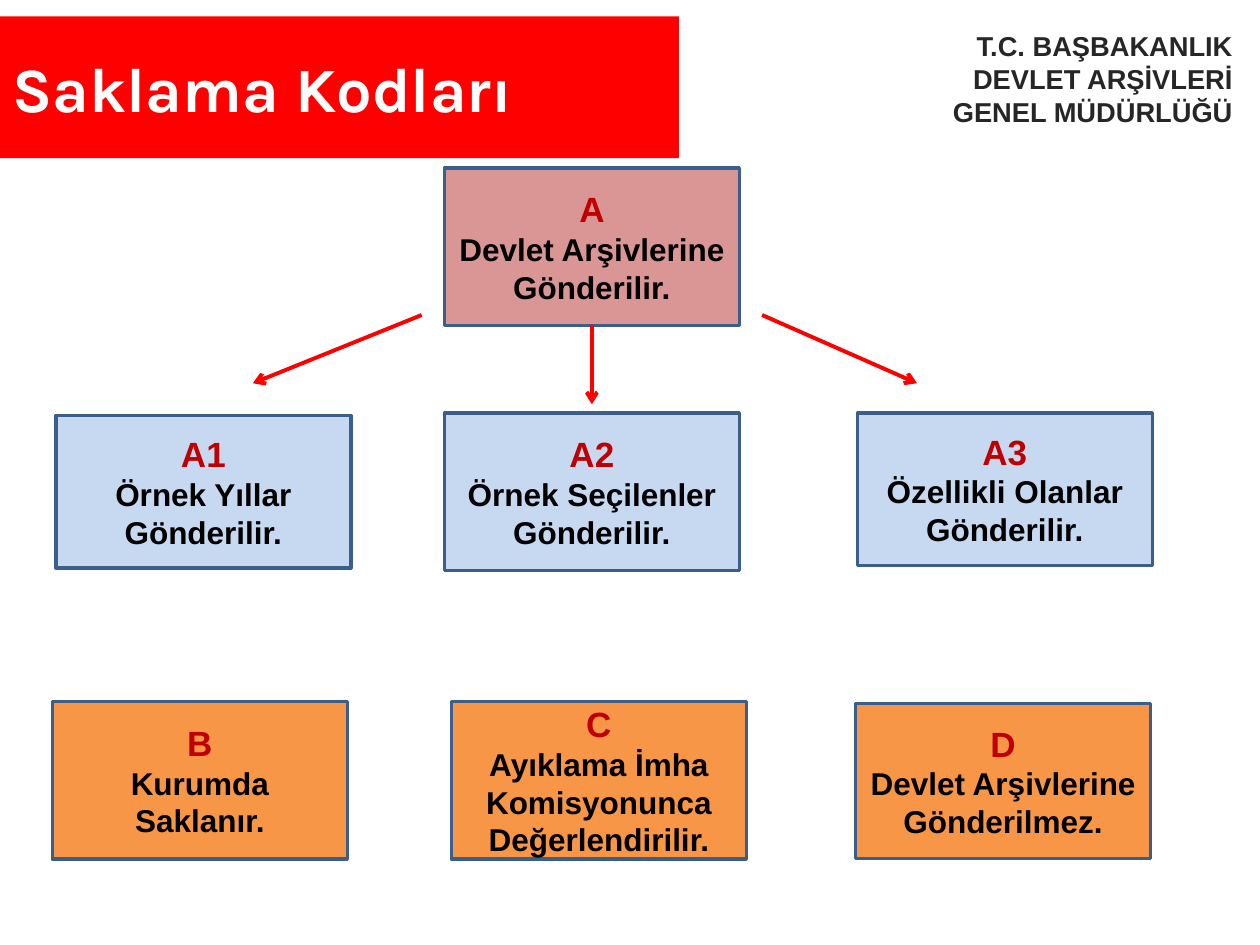
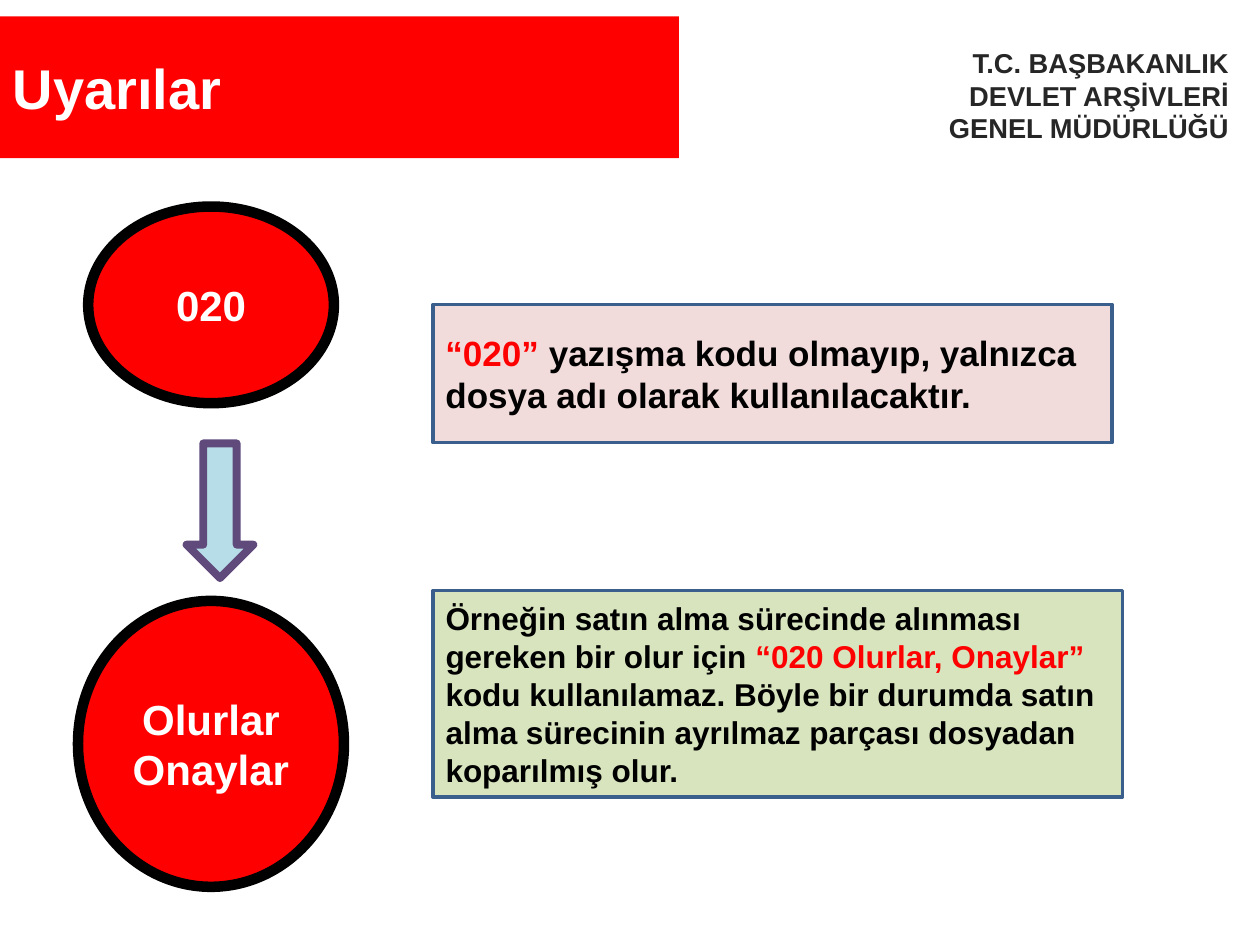
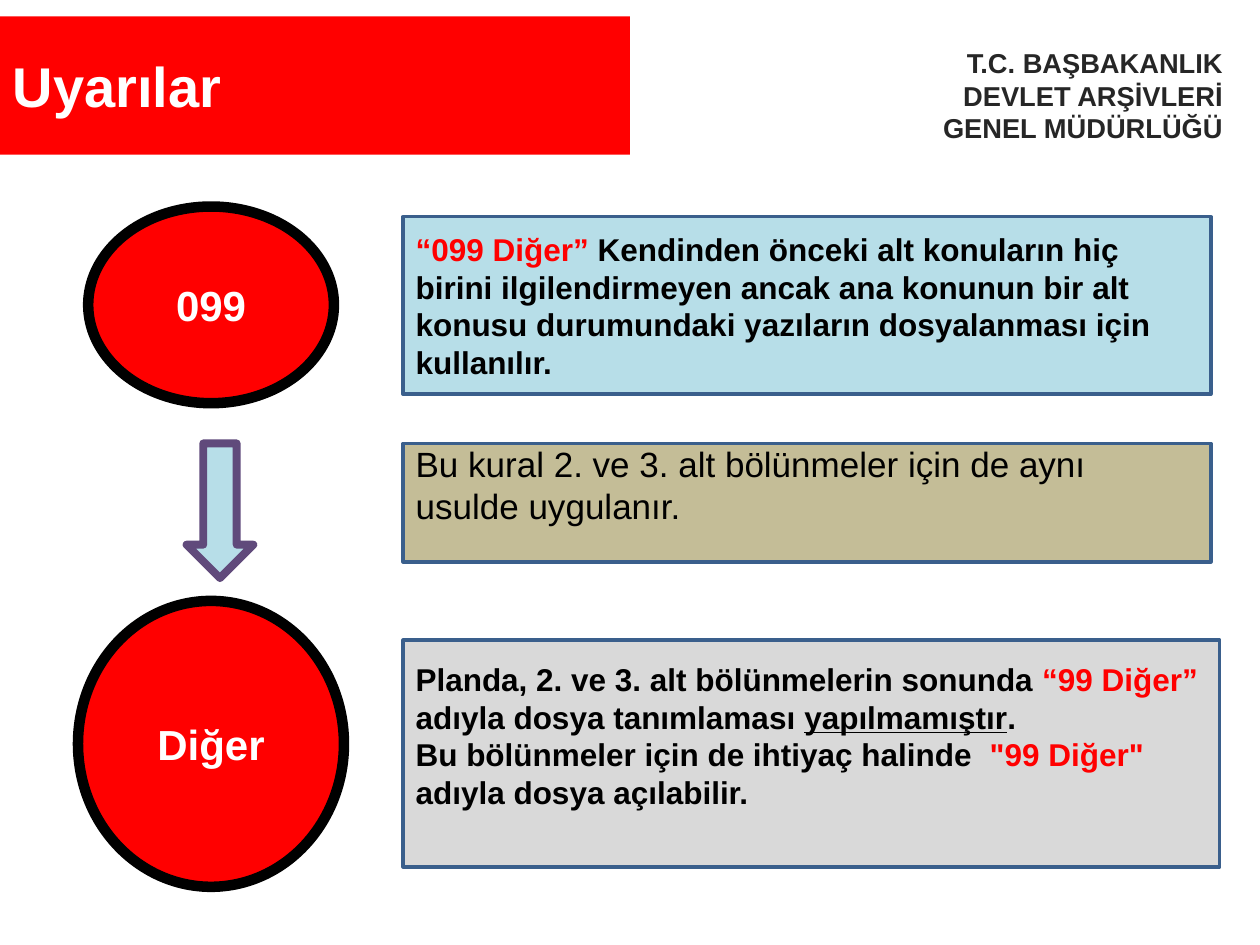
from lxml import etree
from pptx import Presentation
from pptx import util as u
from pptx.dml.color import RGBColor
from pptx.enum import shapes, text
from pptx.oxml import ns

RED, WHITE, BLACK = "FF0000", "FFFFFF", "000000"
CODE_RED, BORDER, GREY = "C00000", "3A5F8C", "262626"
PINK, PALE_BLUE, ORANGE, AQUA = "D99694", "C6D9F1", "F79646", "B7DEE8"
FONT = "Arial"
LEFT, CENTER, RIGHT = text.PP_ALIGN.LEFT, text.PP_ALIGN.CENTER, text.PP_ALIGN.RIGHT
SHAPE = shapes.MSO_SHAPE
CODE_WIDTH = 168.5
INSTITUTION = ["T.C. BAŞBAKANLIK", "DEVLET ARŞİVLERİ", "GENEL MÜDÜRLÜĞÜ"]


def paint(color_format, value):
    """Apply a hex colour to a fill, a line's fill or a font."""
    if hasattr(color_format, "solid"):
        color_format.solid()
        color_format = color_format.fore_color
    color_format.rgb = RGBColor.from_string(value)


def style_run(run, size, color, bold=True, font=FONT):
    run.font.name = font
    run.font.size = u.Pt(size)
    run.font.bold = bold
    paint(run.font.color, color)


def add_box(slide, kind, bounds, fill, line, line_width):
    box = slide.shapes.add_shape(kind, *map(u.Pt, bounds))
    box.shadow.inherit = False
    paint(box.fill, fill)
    paint(box.line.fill, line)
    box.line.width = u.Pt(line_width)
    box.text_frame.vertical_anchor = text.MSO_ANCHOR.MIDDLE
    return box


def write_lines(box, lines, align):
    """Fill a box with one paragraph per (text, size, colour)."""
    frame = box.text_frame
    frame.text = "\n".join(line[0] for line in lines)
    for para, (_, size, color) in zip(frame.paragraphs, lines):
        para.alignment = align
        style_run(para.runs[0], size, color)


def add_header(deck, title, institution_at, band=(388, 81), size=32, font=FONT):
    """Add a slide with the title band and the institution's name."""
    slide = deck.slides.add_slide(deck.slide_layouts[5])
    heading = slide.shapes.title
    heading.left, heading.top = u.Pt(0), u.Pt(9.4)
    heading.width, heading.height = map(u.Pt, band)
    paint(heading.fill, RED)
    heading.text_frame.text = title
    heading.text_frame.vertical_anchor = text.MSO_ANCHOR.MIDDLE
    para = heading.text_frame.paragraphs[0]
    para.alignment = LEFT
    style_run(para.runs[0], size, WHITE, font=font)

    label = add_box(slide, SHAPE.RECTANGLE, (*institution_at, 276, 90), WHITE, WHITE, 0.75)
    write_lines(label, [(name, 15.6, GREY) for name in INSTITUTION], RIGHT)
    return slide


def add_code(slide, code, meaning, left, top, height, fill):
    box = add_box(slide, SHAPE.FLOWCHART_PROCESS, (left, top, CODE_WIDTH, height),
                  fill, BORDER, 2)
    write_lines(box, [(code, 20, CODE_RED), (meaning, 18, BLACK)], CENTER)
    return box


def add_arrow(slide, start, end):
    arrow = slide.shapes.add_connector(shapes.MSO_CONNECTOR.STRAIGHT,
                                       *map(u.Pt, (*start, *end)))
    paint(arrow.line.fill, RED)
    arrow.line.width = u.Pt(2.25)
    etree.SubElement(arrow.line._get_or_add_ln(), ns.qn("a:tailEnd"), type="arrow")
    etree.SubElement(arrow._element.spPr, ns.qn("a:effectLst"))
    return arrow


def add_circle_flow(slide, number, names):
    """Draw the file number, a down arrow and the file name."""
    circles = [((50.4, 118, 140.4, 112.4), [number]),
               ((44.6, 343.4, 152, 163.4), names)]
    for bounds, lines in circles:
        circle = add_box(slide, SHAPE.OVAL, bounds, RED, BLACK, 6)
        write_lines(circle, [(line, 24, WHITE) for line in lines], CENTER)
    add_box(slide, SHAPE.DOWN_ARROW, (106.6, 253.4, 38.2, 77), AQUA, "604A7B", 4.5)


def add_note(slide, bounds, fill, paragraphs, size=18, bold=True, bottom=3.6):
    """Add a bordered note; each span is (text, colour) or (text, colour, underlined)."""
    box = add_box(slide, SHAPE.RECTANGLE, bounds, fill, BORDER, 2)
    frame = box.text_frame
    frame.margin_bottom = u.Pt(bottom)
    for index, spans in enumerate(paragraphs):
        para = frame.add_paragraph() if index else frame.paragraphs[0]
        para.alignment = LEFT
        for words, color, *underlined in spans:
            span = para.add_run()
            span.text = words
            style_run(span, size, color, bold)
            if underlined:
                span.font.underline = True


def build_codes(deck):
    slide = add_header(deck, "Saklama Kodları", (435.6, 0), size=36, font="Karla")
    root = add_code(slide, "A", "Devlet Arşivlerine Gönderilir.", 254, 96, 90, PINK)
    for code, meaning, left, top, height, fill in [
        ("A1", "Örnek Yıllar Gönderilir.", 32, 237.5, 87, PALE_BLUE),
        ("A2", "Örnek Seçilenler Gönderilir.", 254, 236, 90, PALE_BLUE),
        ("A3", "Özellikli Olanlar Gönderilir.", 490, 236, 87, PALE_BLUE),
        ("B", "Kurumda Saklanır.", 30, 401, 90, ORANGE),
        ("C", "Ayıklama İmha Komisyonunca Değerlendirilir.", 258, 401, 90, ORANGE),
        ("D", "Devlet Arşivlerine Gönderilmez.", 489, 402, 88.5, ORANGE),
    ]:
        add_code(slide, code, meaning, left, top, height, fill)
    add_arrow(slide, (241, 180), (144.5, 219))
    add_arrow(slide, (435.5, 180), (524, 219))
    add_arrow(slide, (338.25, 186), (338.25, 231)).begin_connect(root, 2)


def build_approvals(deck):
    slide = add_header(deck, "Uyarılar", (433.4, 9.4))
    add_circle_flow(slide, "020", ["Olurlar", "Onaylar"])
    add_note(slide, (247.5, 174, 388, 79), "F2DCDB", [[
        ("“020” ", RED),
        ("yazışma kodu olmayıp, yalnızca dosya adı olarak kullanılacaktır.", BLACK),
    ]], size=20)
    add_note(slide, (247.5, 337.5, 394, 118), "D7E4BD", [[
        ("Örneğin satın alma sürecinde alınması gereken bir olur için ", BLACK),
        ("“020 Olurlar, Onaylar” ", RED),
        ("kodu kullanılamaz. Böyle bir durumda satın alma sürecinin "
         "ayrılmaz parçası dosyadan koparılmış olur.", BLACK),
    ]])


def build_other(deck):
    slide = add_header(deck, "Uyarılar", (430, 9.4), band=(360, 79))
    add_circle_flow(slide, "099", ["Diğer"])
    add_note(slide, (230.4, 123.8, 461.5, 101.5), AQUA, [[
        ("“099 Diğer” ", RED),
        ("Kendinden önceki alt konuların hiç birini ilgilendirmeyen ancak ana konunun "
         "bir alt konusu durumundaki yazıların dosyalanması için kullanılır.", BLACK),
    ]])
    add_note(slide, (230.4, 253.4, 461.5, 67.7), "C4BD97", [[
        ("Bu kural 2. ve 3. alt bölünmeler için de aynı usulde uygulanır.", BLACK),
    ]], size=20, bold=False, bottom=24.3)
    add_note(slide, (230.4, 365.8, 466.6, 129.6), "D9D9D9", [
        [("Planda, 2. ve 3. alt bölünmelerin sonunda ", BLACK),
         ("“99 Diğer” ", RED),
         ("adıyla dosya tanımlaması ", BLACK),
         ("yapılmamıştır", BLACK, True),
         (".", BLACK)],
        [("Bu bölünmeler için de ihtiyaç halinde  ", BLACK),
         ("\"99 Diğer\" ", RED),
         ("adıyla dosya açılabilir.", BLACK)],
    ], bottom=24.3)


def main():
    deck = Presentation()
    deck.slide_width, deck.slide_height = u.Pt(720), u.Pt(540)
    build_codes(deck)
    build_approvals(deck)
    build_other(deck)
    deck.save("out.pptx")


if __name__ == "__main__":
    main()
